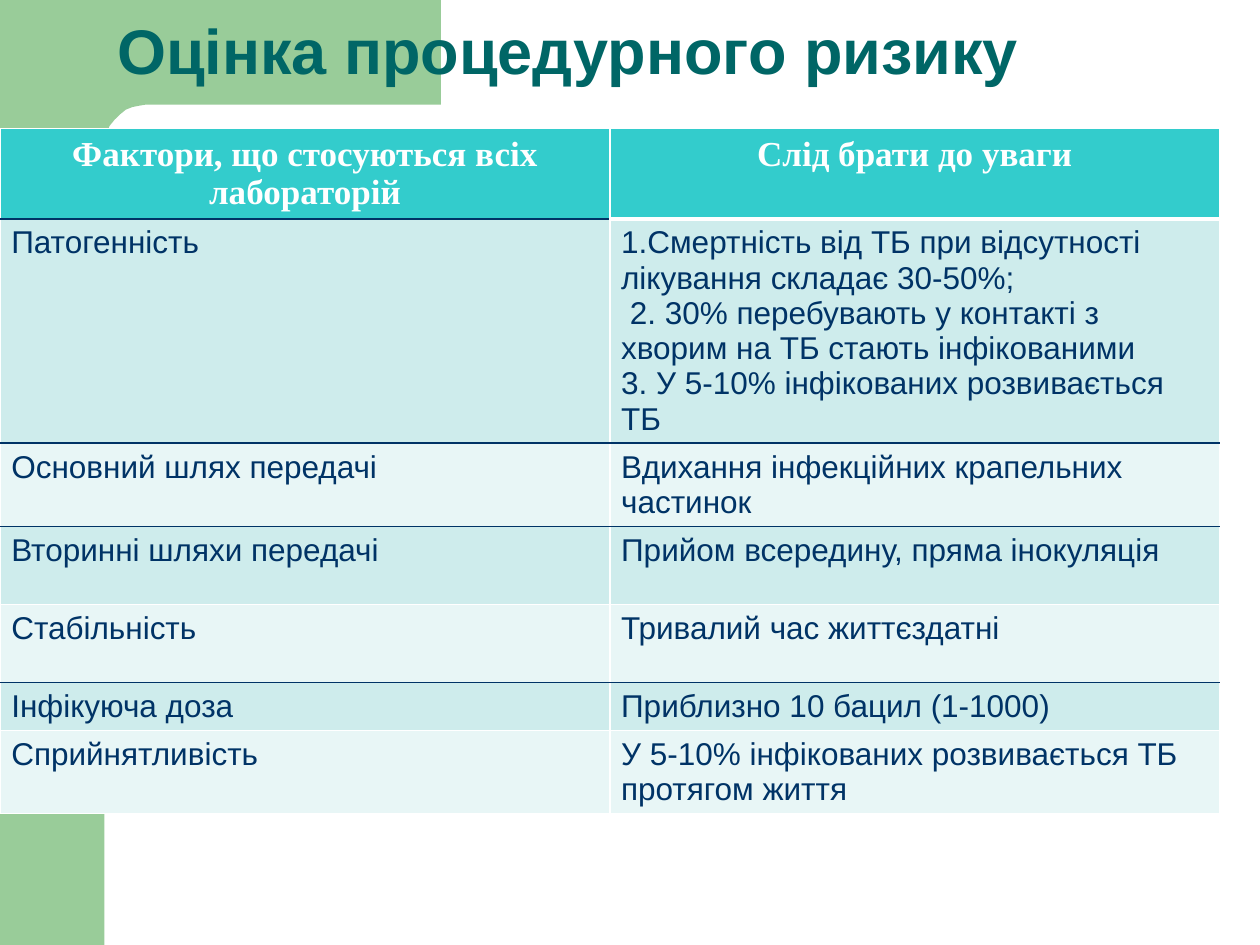
"""Build the procedural risk assessment slide with its factor table."""
import math

from pptx import Presentation
from pptx.dml.color import RGBColor
from pptx.enum.shapes import MSO_SHAPE
from pptx.enum.text import MSO_ANCHOR, MSO_AUTO_SIZE, PP_ALIGN
from pptx.oxml import parse_xml
from pptx.oxml.ns import nsdecls
from pptx.util import Pt

PX = 9144
RECT = MSO_SHAPE.RECTANGLE
BOTTOM = MSO_ANCHOR.BOTTOM
NO_FIT = MSO_AUTO_SIZE.NONE
LEFT, CENTER = PP_ALIGN.LEFT, PP_ALIGN.CENTER
GREEN = RGBColor(0x99, 0xCC, 0x99)
TEAL = RGBColor(0x00, 0x66, 0x66)
NAVY = RGBColor(0x00, 0x33, 0x66)
WHITE = RGBColor(0xFF, 0xFF, 0xFF)
HEAD = RGBColor(0x33, 0xCC, 0xCC)
BANDS = [RGBColor(0xE8, 0xF6, 0xF6), RGBColor(0xCE, 0xEC, 0xEC)]

ROWS = [
    ("Фактори, що стосуються всіх лабораторій", "Слід брати до уваги"),
    ("Патогенність",
     "1.Смертність від ТБ при відсутності лікування складає 30-50%;\n"
     " 2. 30% перебувають у контакті з хворим на ТБ стають інфікованими\n"
     "3. У 5-10% інфікованих розвивається ТБ"),
    ("Основний шлях передачі", "Вдихання інфекційних крапельних частинок"),
    ("Вторинні шляхи передачі", "Прийом всередину, пряма інокуляція"),
    ("Стабільність", "Тривалий час життєздатні"),
    ("Інфікуюча доза", "Приблизно 10 бацил (1-1000)"),
    ("Сприйнятливість", "У 5-10% інфікованих розвивається ТБ протягом життя"),
]
HEIGHTS = [62, 168, 62, 62, 62, 36, 62]
EDGES = [WHITE, NAVY, NAVY, NAVY, WHITE, NAVY, WHITE, WHITE]


def paint(sp):
    sp.shadow.inherit = False
    sp.fill.solid()
    sp.fill.fore_color.rgb = GREEN
    sp.line.fill.background()


def add_border(cell, side, color, width):
    cell._tc.get_or_add_tcPr().append(parse_xml(
        f'<a:ln{side} {nsdecls("a")} w="{Pt(width)}"><a:solidFill>'
        f'<a:srgbClr val="{color}"/></a:solidFill></a:ln{side}>'))


prs = Presentation()
prs.slide_width, prs.slide_height = 1000 * PX, 750 * PX
slide = prs.slides.add_slide(prs.slide_layouts[5])
shapes = slide.shapes

paint(shapes.add_shape(RECT, 0, 0, 83 * PX, 750 * PX))

arc = []
for deg in range(0, 91, 10):
    a = math.radians(deg)
    arc.append((round(116 - 33 * math.sin(a)), round(116 - 33 * math.cos(a))))
fb = shapes.build_freeform(50, 0, scale=PX)
fb.add_line_segments([(350, 0), (350, 83)] + arc + [(83, 128), (50, 128)])
paint(fb.convert_to_shape())

title = shapes.title
shapes._spTree.append(title._element)
title.left, title.top = 83 * PX, -50 * PX
title.width, title.height = 867 * PX, 125 * PX
tf = title.text_frame
tf.text = "Оцінка процедурного ризику"
tf.word_wrap = True
tf.auto_size = NO_FIT
tf.vertical_anchor = BOTTOM
p = tf.paragraphs[0]
p.alignment = LEFT
p.line_spacing = 0.9
font = p.runs[0].font
font.name, font.size, font.bold = "Arial", Pt(36), True
font.color.rgb = TEAL

table = shapes.add_table(len(ROWS), 2, 0, 102 * PX, 968 * PX, sum(HEIGHTS) * PX).table
for i, texts in enumerate(ROWS):
    table.rows[i].height = HEIGHTS[i] * PX
    header = i == 0
    for j, text in enumerate(texts):
        cell = table.cell(i, j)
        cell.margin_left = cell.margin_right = 9 * PX
        cell.margin_top = cell.margin_bottom = 5 * PX
        for side in "LR":
            add_border(cell, side, WHITE, 1)
        for side, edge in (("T", i), ("B", i + 1)):
            if (edge, j) == (1, 1):
                add_border(cell, side, WHITE, 3)
            else:
                add_border(cell, side, EDGES[edge], 1)
        cell.fill.solid()
        cell.fill.fore_color.rgb = HEAD if header else BANDS[i % 2]
        cell.text_frame.text = text
        for p in cell.text_frame.paragraphs:
            p.alignment = CENTER if header else LEFT
            font = p.runs[0].font
            font.name = "Times New Roman" if header else "Arial"
            font.size = Pt(20 if header else 18)
            font.bold = header
            font.color.rgb = WHITE if header else NAVY

prs.save("out.pptx")
